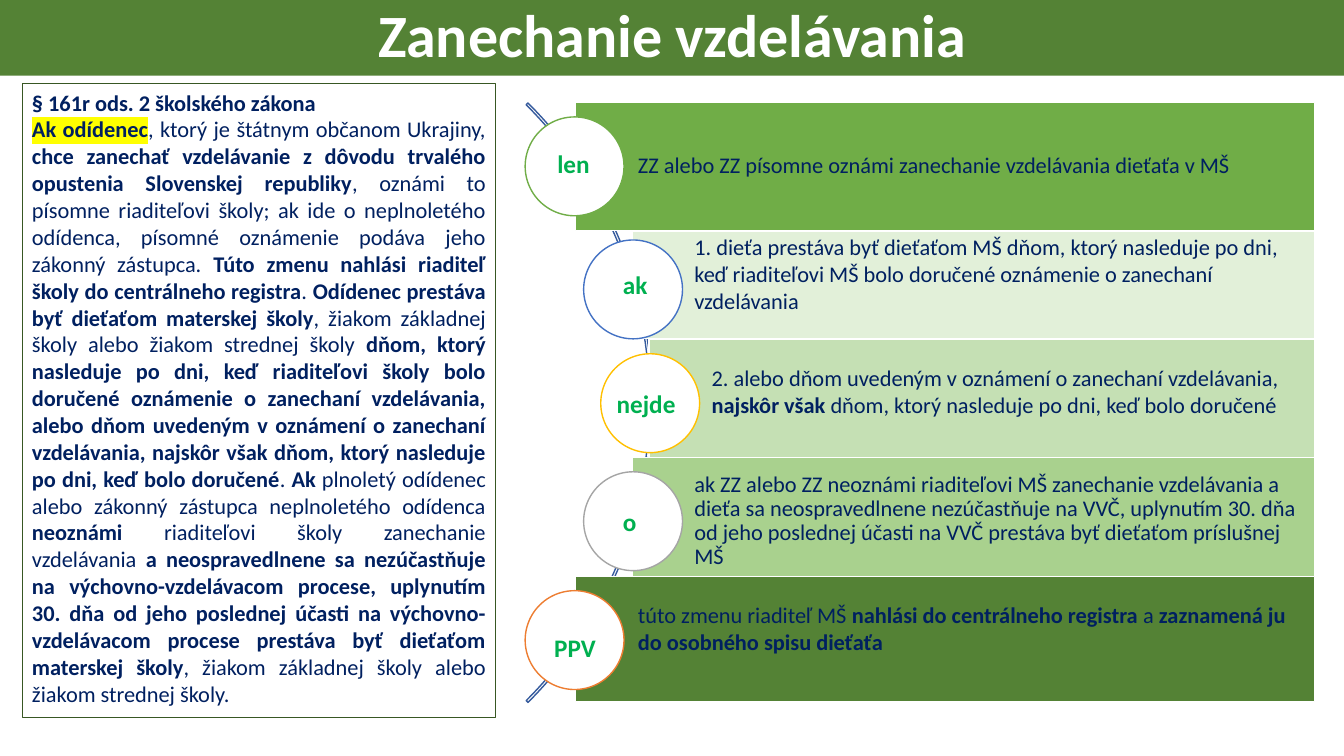
import pptx
import pptx.util
import pptx.dml.color
import pptx.enum.shapes
import pptx.enum.text
import pptx.oxml
import pptx.oxml.ns

Pt = pptx.util.Pt
SHAPE = pptx.enum.shapes.MSO_SHAPE
ALIGN = pptx.enum.text.PP_ALIGN
ANCHOR = pptx.enum.text.MSO_ANCHOR
FIT = pptx.enum.text.MSO_AUTO_SIZE

INK = {
    "navy": "002060", "white": "FFFFFF", "label": "00B050", "arc": "365B9D",
    "dark": "548235", "edge": "385723", "green": "70AD47", "pale": "E2F0D9",
    "light": "C5E0B4", "mid": "A9D18E", "blue": "4472C4", "gold": "FFC000",
    "grey": "A5A5A5", "orange": "ED7D31", "mark": "FFFF00",
}
RIGHT = 939.2   # shared right edge of the bars
DISC = 70.6     # circle diameter
LIFT = 19       # bottom inset of bars whose text sits above the middle

HEAD = "**§ 161r ods. 2 školského zákona**"
# sentences and clauses of one paragraph
CLAUSES = [
    "**==Ak odídenec**, ktorý je štátnym občanom Ukrajiny, **chce zanechať "
    "vzdelávanie z dôvodu trvalého opustenia Slovenskej republiky**, oznámi to "
    "písomne riaditeľovi školy; ak ide o neplnoletého odídenca, písomné oznámenie "
    "podáva jeho zákonný zástupca.",
    "**Túto zmenu nahlási riaditeľ školy do centrálneho registra**.",
    "**Odídenec prestáva byť dieťaťom materskej školy**, žiakom základnej školy "
    "alebo žiakom strednej školy **dňom, ktorý nasleduje po dni, keď riaditeľovi "
    "školy bolo doručené oznámenie o zanechaní vzdelávania, alebo dňom uvedeným "
    "v oznámení o zanechaní vzdelávania, najskôr však dňom, ktorý nasleduje po "
    "dni, keď bolo doručené**.",
    "**Ak** plnoletý odídenec alebo zákonný zástupca neplnoletého odídenca "
    "**neoznámi** riaditeľovi školy zanechanie vzdelávania "
    "**a neospravedlnene sa nezúčastňuje na výchovno-vzdelávacom procese, "
    "uplynutím 30. dňa od jeho poslednej účasti na výchovno-vzdelávacom procese "
    "prestáva byť dieťaťom materskej školy**, žiakom základnej školy alebo "
    "žiakom strednej školy.",
]

# bar (left, top, height), fill, circle (left, top), line,
# label, label box (left, top, width), text, bottom inset, line spacing
STEPS = [
    ((411.1, 73.4, 91.4), "green", (375.1, 83.5), "green",
     "len", (391, 102.2, 37.4),
     "ZZ alebo ZZ písomne oznámi zanechanie vzdelávania dieťaťa v MŠ", 3, 0.9),
    ((451.4, 164.9, 77), "pale", (416.9, 171.4), "blue",
     "ak", (437.8, 188.6, 32.4),
     "1. dieťa prestáva byť dieťaťom MŠ dňom, ktorý nasleduje po dni, keď "
     "riaditeľovi MŠ bolo doručené oznámenie o zanechaní vzdelávania", LIFT, 1),
    ((463.7, 242.6, 90), "light", (429.1, 252.7), "gold",
     "nejde", (433.4, 273.6, 56.9),
     "2. alebo dňom uvedeným v oznámení o zanechaní vzdelávania, **najskôr však** "
     "dňom, ktorý nasleduje po dni, keď bolo doručené", LIFT, 1),
    ((451.4, 326.9, 90.7), "mid", (416.9, 337), "grey",
     "o", (437.8, 357.8, 24.5),
     "ak ZZ alebo ZZ neoznámi riaditeľovi MŠ zanechanie vzdelávania a dieťa sa "
     "neospravedlnene nezúčastňuje na VVČ, uplynutím 30. dňa od jeho poslednej "
     "účasti na VVČ prestáva byť dieťaťom príslušnej MŠ", 3, 0.9),
    ((411.1, 411.8, 89.3), "dark", (375.1, 421.9), "orange",
     "PPV", (388.8, 447.8, 44.6),
     "túto zmenu riaditeľ MŠ **nahlási do centrálneho registra** a **zaznamená ju "
     "do osobného spisu dieťaťa**", LIFT, 1),
]


def color(name):
    return pptx.dml.color.RGBColor.from_string(INK[name])


def assign(item, values):
    for key, value in values.items():
        setattr(item, key, value)


def draw(slide, kind, box, fill=None, line=None, width=1):
    shape = slide.shapes.add_shape(kind, *map(Pt, box))
    shape.shadow.inherit = False
    if fill:
        shape.fill.solid()
        shape.fill.fore_color.rgb = color(fill)
    else:
        shape.fill.background()
    if line:
        shape.line.color.rgb = color(line)
        shape.line.width = Pt(width)
    else:
        shape.line.fill.background()
    return shape


def mark(run):
    """Highlight a run that already has its colour."""
    light = pptx.oxml.parse_xml(
        f'<a:highlight {pptx.oxml.ns.nsdecls("a")}>'
        f'<a:srgbClr val="{INK["mark"]}"/></a:highlight>')
    props = run.font.fill._xPr
    props.find(pptx.oxml.ns.qn("a:solidFill")).addnext(light)


def write(shape, lines, frame, para, size=16, ink="navy"):
    """Fill a shape with text; ** switches bold, a leading == highlights."""
    body = shape.text_frame
    assign(body, frame)
    for index, line in enumerate(lines):
        block = body.add_paragraph() if index else body.paragraphs[0]
        assign(block, para)
        for turn, part in enumerate(line.split("**")):
            if not part:
                continue
            run = block.add_run()
            run.text = part.removeprefix("==")
            run.font.color.rgb = color(ink)
            assign(run.font, {"name": "Calibri", "size": Pt(size),
                              "bold": turn % 2 == 1})
            if part.startswith("=="):
                mark(run)


def bar(slide, place, fill, text, foot, space):
    left, top, height = place
    shape = draw(slide, SHAPE.RECTANGLE, (left, top, RIGHT - left, height),
                 fill, "white")
    frame = {"word_wrap": True, "vertical_anchor": ANCHOR.MIDDLE,
             "margin_left": Pt(44.6), "margin_top": Pt(3),
             "margin_right": Pt(3), "margin_bottom": Pt(foot)}
    write(shape, [text], frame,
          {"alignment": ALIGN.LEFT, "line_spacing": space})


def label(slide, place, text):
    left, top, width = place
    box = slide.shapes.add_textbox(*map(Pt, (left, top, width, 28.8)))
    write(box, [f"**{text}**"],
          {"word_wrap": False, "auto_size": FIT.SHAPE_TO_FIT_TEXT},
          {"alignment": ALIGN.LEFT}, 18, "label")


def main():
    deck = pptx.Presentation()
    assign(deck, {"slide_width": Pt(960), "slide_height": Pt(540)})
    slide = deck.slides.add_slide(deck.slide_layouts[6])

    arc = draw(slide, SHAPE.BLOCK_ARC, (-139.7, -15.1, 605.5, 605.5), line="arc")
    for index, value in enumerate((189, 27, 0.003)):
        arc.adjustments[index] = value

    for place, fill, spot, ring, name, seat, text, foot, space in STEPS:
        bar(slide, place, fill, text, foot, space)
        draw(slide, SHAPE.OVAL, (*spot, DISC, DISC), "white", ring)
        label(slide, seat, name)

    title = draw(slide, SHAPE.RECTANGLE, (0, 0, 960, 54), "dark")
    write(title, ["**Zanechanie vzdelávania**"],
          {"word_wrap": True, "vertical_anchor": ANCHOR.MIDDLE},
          {"alignment": ALIGN.CENTER, "line_spacing": 0.9}, 42.9, "white")

    law = draw(slide, SHAPE.RECTANGLE, (15.8, 59.8, 338.4, 452.9),
               line="edge", width=0.75)
    write(law, [HEAD, " ".join(CLAUSES)],
          {"word_wrap": True, "vertical_anchor": ANCHOR.TOP,
           "auto_size": FIT.SHAPE_TO_FIT_TEXT}, {"alignment": ALIGN.JUSTIFY})

    deck.save("out.pptx")


if __name__ == "__main__":
    main()
